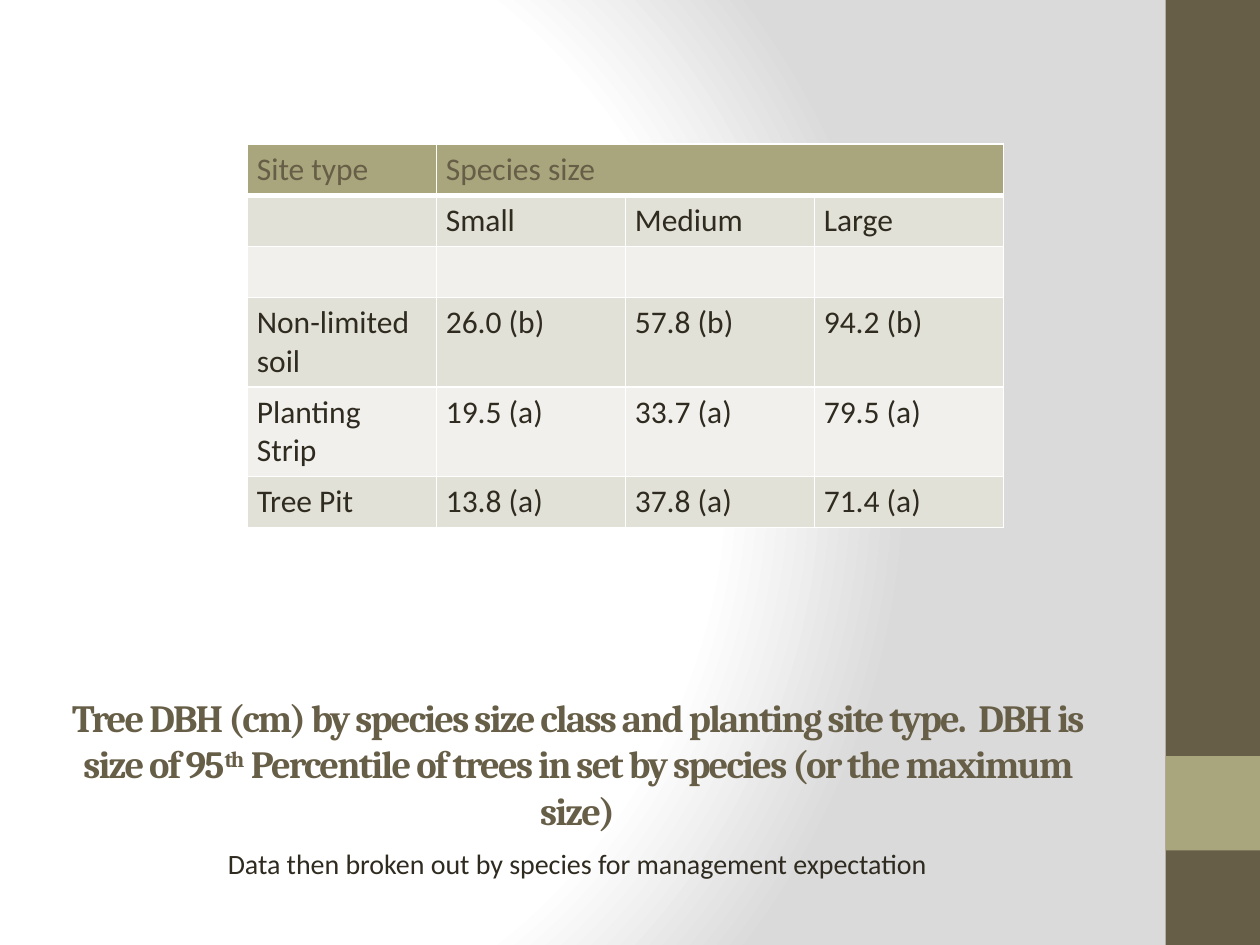
from dataclasses import dataclass

from lxml import etree
from pptx import Presentation
from pptx.dml.color import RGBColor
from pptx.enum.shapes import MSO_SHAPE
from pptx.enum.text import MSO_ANCHOR, MSO_AUTO_SIZE, PP_ALIGN
from pptx.oxml.ns import qn
from pptx.util import Pt

RECT = MSO_SHAPE.RECTANGLE
BOTTOM, TOP = MSO_ANCHOR.BOTTOM, MSO_ANCHOR.TOP
CENTER = PP_ALIGN.CENTER
NO_FIT = MSO_AUTO_SIZE.NONE
TITLE_ONLY = 5


@dataclass(frozen=True)
class Theme:
    brown: str = "675E47"
    olive: str = "A9A57C"
    ink: str = "2F2B20"
    band_dark: str = "E2E1D7"
    band_light: str = "F1F0EC"
    white: str = "FFFFFF"
    grey: str = "DADADA"
    heading_font: str = "Cambria"
    body_font: str = "Calibri"
    title_size: int = 22
    table_size: int = 18
    caption_size: int = 16


THEME = Theme()

HEADER = ["Site type", "Species size", "", ""]
BODY = [
    ["", "Small", "Medium", "Large"],
    ["", "", "", ""],
    ["Non-limited soil", "26.0 (b)", "57.8 (b)", "94.2 (b)"],
    ["Planting Strip", "19.5 (a)", "33.7 (a)", "79.5 (a)"],
    ["Tree Pit", "13.8 (a)", "37.8 (a)", "71.4 (a)"],
]


def paint(fill, color):
    fill.solid()
    fill.fore_color.rgb = RGBColor.from_string(color)


def add_run(p, text, font, size, color, bold=False):
    r = p.add_run()
    r.text = text
    r.font.name, r.font.size, r.font.bold = font, Pt(size), bold
    r.font.color.rgb = RGBColor.from_string(color)
    return r


def place(sp, box):
    sp.left, sp.top, sp.width, sp.height = map(Pt, box)


def set_background(s):
    """Circular gradient, white in the centre and grey outside."""
    s.background.fill.gradient()
    grad = s._element.find(".//" + qn("a:gradFill"))
    for child in list(grad):
        grad.remove(child)
    stops = etree.SubElement(grad, qn("a:gsLst"))
    for pos, color in ((0, THEME.white), (75, THEME.white), (100, THEME.grey)):
        gs = etree.SubElement(stops, qn("a:gs"), pos=str(pos * 1000))
        etree.SubElement(gs, qn("a:srgbClr"), val=color)
    circle = etree.SubElement(grad, qn("a:path"), path="circle")
    etree.SubElement(circle, qn("a:fillToRect"),
                     l="20000", t="50000", r="100000", b="50000")


def add_side_bar(s, box):
    """Full-height bar with a square accent."""
    x, y, w, h = box
    accent = (x, y + 0.8 * h, w, w)
    for part, color in ((box, THEME.brown), (accent, THEME.olive)):
        sp = s.shapes.add_shape(RECT, *map(Pt, part))
        sp.shadow.inherit = False
        paint(sp.fill, color)
        sp.line.fill.background()


def add_title(s, box):
    sp = s.shapes.title
    place(sp, box)
    tf = sp.text_frame
    tf.word_wrap, tf.auto_size, tf.vertical_anchor = True, NO_FIT, BOTTOM
    p = tf.paragraphs[0]
    p.alignment = CENTER
    parts = [
        ("Tree DBH (cm) by species size class and planting site type.  "
         "DBH is size of 95", 0),
        ("th", 30),
        (" Percentile of trees in set by species (or the maximum size)", 0),
    ]
    for text, raised in parts:
        r = add_run(p, text, THEME.heading_font, THEME.title_size,
                    THEME.brown, bold=True)
        rPr = r._r.get_or_add_rPr()
        rPr.set("spc", "-100")
        if raised:
            rPr.set("baseline", str(raised * 1000))


def set_borders(cell, bottom=1):
    tcPr = cell._tc.get_or_add_tcPr()
    widths = {"a:lnL": 1, "a:lnR": 1, "a:lnT": 1, "a:lnB": bottom}
    for i, (tag, width) in enumerate(widths.items()):
        ln = etree.Element(qn(tag), w=str(Pt(width)))
        fill = etree.SubElement(ln, qn("a:solidFill"))
        etree.SubElement(fill, qn("a:srgbClr"), val=THEME.white)
        tcPr.insert(i, ln)


def add_dbh_table(s, box):
    rows = [HEADER] + BODY
    frame = s.shapes.add_table(len(rows), len(HEADER), *map(Pt, box))
    table = frame.table
    for i, values in enumerate(rows):
        header = i == 0
        band = THEME.band_dark if i % 2 else THEME.band_light
        for j, text in enumerate(values):
            cell = table.cell(i, j)
            paint(cell.fill, THEME.olive if header else band)
            set_borders(cell, bottom=3 if header else 1)
            cell.margin_left = cell.margin_right = Pt(5.4)
            cell.margin_top = cell.margin_bottom = Pt(3.6)
            if text:
                add_run(cell.text_frame.paragraphs[0], text, THEME.body_font,
                        THEME.table_size, THEME.brown if header else THEME.ink)
    table.cell(0, 1).merge(table.cell(0, len(HEADER) - 1))


def add_caption(s, box):
    tf = s.shapes.add_textbox(*map(Pt, box)).text_frame
    tf.word_wrap, tf.auto_size, tf.vertical_anchor = True, NO_FIT, TOP
    p = tf.paragraphs[0]
    p.alignment = CENTER
    p.space_before = Pt(3.2)
    add_run(p, "Data then broken out by species for management expectation",
            THEME.body_font, THEME.caption_size, THEME.ink)


def main():
    prs = Presentation()
    prs.slide_width, prs.slide_height = Pt(720), Pt(540)
    s = prs.slides.add_slide(prs.slide_layouts[TITLE_ONLY])
    set_background(s)
    add_side_bar(s, (666, 0, 54, 540))
    add_title(s, (24, 433, 612, 46.5))
    add_dbh_table(s, (141.4, 82.4, 432, 175.2))
    add_caption(s, (24, 480, 612, 48))
    prs.save("out.pptx")


if __name__ == "__main__":
    main()
